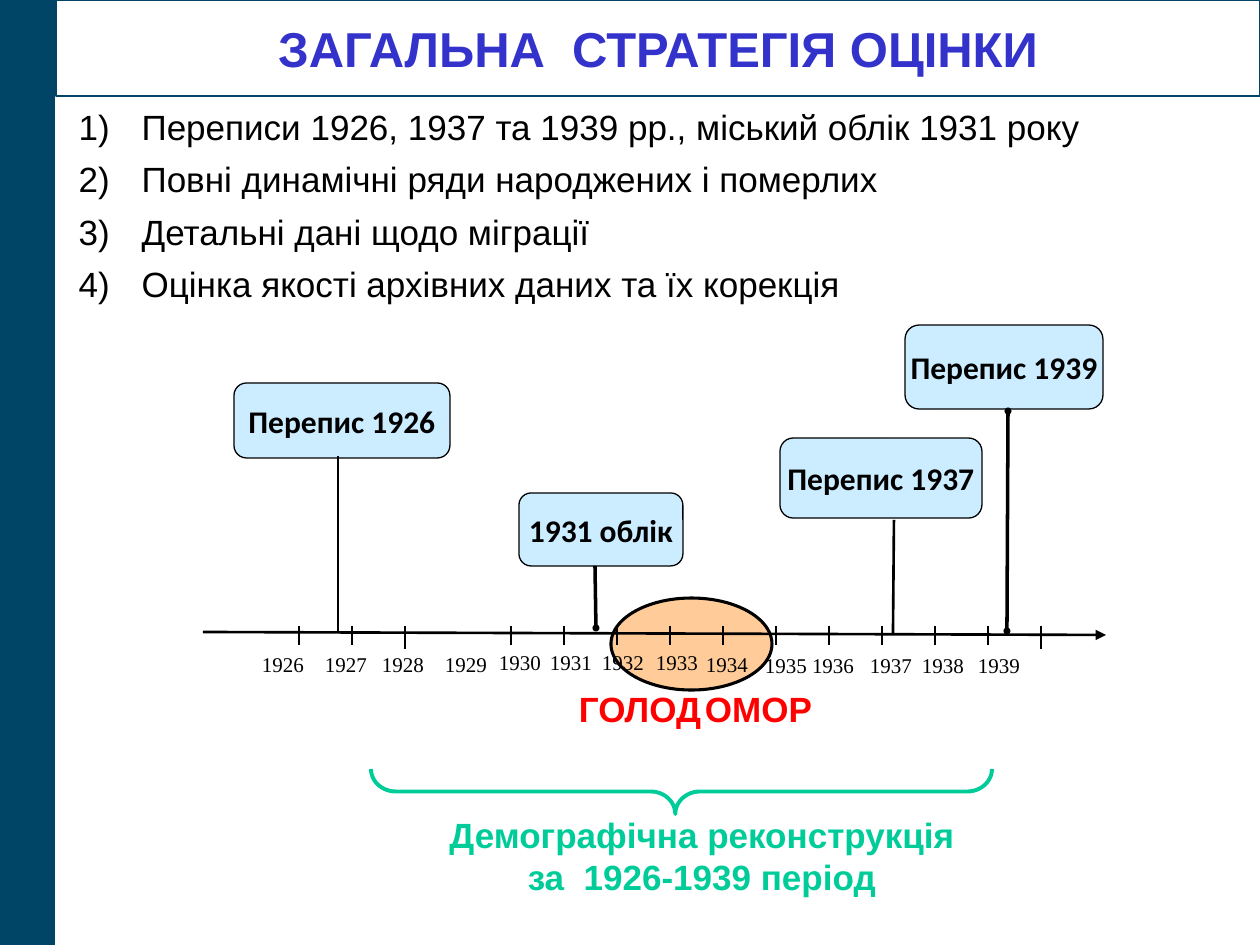
"""Build a slide with a census timeline and the period of demographic reconstruction."""
from dataclasses import dataclass

import pptx
import pptx.dml.color
import pptx.enum.shapes
import pptx.enum.text
import pptx.oxml
import pptx.oxml.ns
import pptx.util

PX_PER_INCH = 126
COLORS = {
    "band": "004466", "title": "3333CC", "black": "000000", "white": "FFFFFF",
    "box": "CCECFF", "ellipse": "FFCC99", "famine": "FF0000", "period": "00CC99",
}
SHAPES = pptx.enum.shapes.MSO_SHAPE
ANCHORS = pptx.enum.text.MSO_ANCHOR
CENTER = pptx.enum.text.PP_ALIGN.CENTER


@dataclass(frozen=True)
class Box:
    left: int
    top: int
    width: int
    height: int


@dataclass(frozen=True)
class Style:
    font: str
    size: int
    color: str
    bold: bool = False


@dataclass(frozen=True)
class Callout:
    text: str
    box: Box


@dataclass(frozen=True)
class Line:
    start: tuple[int, int]
    end: tuple[int, int]
    width: float = 1.5
    head: str = "none"
    tail: str = "none"


@dataclass(frozen=True)
class YearLabel:
    year: int
    center: int
    top: int


TITLE_STYLE = Style("Arial", 28, "title", True)
LIST_STYLE = Style("Arial", 20, "black")
CALLOUT_STYLE = Style("Calibri", 18, "black", True)
YEAR_STYLE = Style("Times New Roman", 12, "black")
FAMINE_STYLE = Style("Arial", 20, "famine", True)
PERIOD_STYLE = Style("Arial", 20, "period", True)

SOURCES = [
    "Переписи 1926, 1937 та 1939 рр., міський облік 1931 року",
    "Повні динамічні ряди народжених і померлих",
    "Детальні дані щодо міграції",
    "Оцінка якості архівних даних та їх корекція",
]
CALLOUTS = [
    Callout("Перепис 1926", Box(234, 383, 216, 75)),
    Callout("Перепис 1937", Box(780, 438, 202, 80)),
    Callout("Перепис 1939", Box(905, 325, 198, 84)),
    Callout("1931 облік", Box(519, 493, 164, 73)),
]
POINTERS = [
    Line((338, 456), (338, 631)),
    Line((595, 566), (596, 628), 2, tail="oval"),
    Line((894, 520), (893, 635)),
    Line((1008, 411), (1007, 631), 2, "oval", "oval"),
]
AXIS = Line((203, 632), (1106, 635), tail="triangle")
TICK_START, TICK_STEP, TICK_TOP = 299, 53, 626
TICKS = [index for index in range(15) if index != 3]
LONG_TICKS = (2, 14)
YEAR_CENTERS = [283, 346, 403, 466, 520, 571, 623, 677, 727, 786, 833, 891, 943, 999]


def px(length: int) -> int:
    return pptx.util.Inches(length / PX_PER_INCH)


def rgb(name: str) -> pptx.dml.color.RGBColor:
    return pptx.dml.color.RGBColor.from_string(COLORS[name])


def place(shape, box: Box) -> None:
    shape.left, shape.top = px(box.left), px(box.top)
    shape.width, shape.height = px(box.width), px(box.height)


def add_run(paragraph, text: str, style: Style) -> None:
    run = paragraph.add_run()
    run.text = text
    run.font.name = style.font
    run.font.size = pptx.util.Pt(style.size)
    run.font.bold = style.bold
    run.font.color.rgb = rgb(style.color)


def paint(shape, fill: str | None, line: str | None, width: float = 0.75) -> None:
    if fill:
        shape.fill.solid()
        shape.fill.fore_color.rgb = rgb(fill)
    else:
        shape.fill.background()
    if line:
        shape.line.color.rgb = rgb(line)
        shape.line.width = pptx.util.Pt(width)
    else:
        shape.line.fill.background()


def add_shape(slide, kind, box: Box, fill: str | None, line: str | None, width: float = 0.75):
    shape = slide.shapes.add_shape(
        kind, px(box.left), px(box.top), px(box.width), px(box.height))
    shape.shadow.inherit = False
    paint(shape, fill, line, width)
    return shape


def add_callout(slide, callout: Callout) -> None:
    shape = add_shape(slide, SHAPES.FLOWCHART_ALTERNATE_PROCESS, callout.box, "box", "black")
    frame = shape.text_frame
    frame.margin_left = frame.margin_right = frame.margin_top = frame.margin_bottom = 0
    frame.vertical_anchor = ANCHORS.MIDDLE
    frame.word_wrap = False
    frame.paragraphs[0].alignment = CENTER
    add_run(frame.paragraphs[0], callout.text, CALLOUT_STYLE)


def add_line(slide, line: Line) -> None:
    connector = slide.shapes.add_connector(
        pptx.enum.shapes.MSO_CONNECTOR.STRAIGHT,
        *(px(value) for value in line.start + line.end))
    connector.line.color.rgb = rgb("black")
    connector.line.width = pptx.util.Pt(line.width)
    outline = connector.line._get_or_add_ln()
    for tag, arrowhead in (("a:headEnd", line.head), ("a:tailEnd", line.tail)):
        if arrowhead != "none":
            size = "sm" if arrowhead == "oval" else "med"
            outline.append(outline.makeelement(
                pptx.oxml.ns.qn(tag), {"type": arrowhead, "w": size, "len": size}))
    properties = connector._element.spPr
    properties.append(properties.makeelement(pptx.oxml.ns.qn("a:effectLst"), {}))


def add_text(slide, text: str, box: Box, style: Style) -> None:
    shape = slide.shapes.add_textbox(
        px(box.left), px(box.top), px(box.width), px(box.height))
    shape.text_frame.word_wrap = True
    paragraph = shape.text_frame.paragraphs[0]
    paragraph.alignment = CENTER
    add_run(paragraph, text, style)


def fill_title(slide) -> None:
    title = slide.shapes.title
    place(title, Box(56, 0, 1204, 96))
    paint(title, "white", "band")
    frame = title.text_frame
    frame.auto_size = pptx.enum.text.MSO_AUTO_SIZE.NONE
    frame.vertical_anchor = ANCHORS.MIDDLE
    frame.word_wrap = False
    frame.paragraphs[0].alignment = CENTER
    add_run(frame.paragraphs[0], "ЗАГАЛЬНА  СТРАТЕГІЯ ОЦІНКИ", TITLE_STYLE)


def fill_sources(slide) -> None:
    body = slide.placeholders[1]
    place(body, Box(66, 99, 1109, 214))
    frame = body.text_frame
    frame.auto_size = pptx.enum.text.MSO_AUTO_SIZE.NONE
    for index, text in enumerate(SOURCES):
        paragraph = frame.add_paragraph() if index else frame.paragraphs[0]
        paragraph.space_before = pptx.util.Pt(6)
        properties = paragraph._p.get_or_add_pPr()
        properties.set("marL", str(px(63)))
        properties.set("indent", str(-px(63)))
        properties.append(properties.makeelement(
            pptx.oxml.ns.qn("a:buAutoNum"), {"type": "arabicParenR"}))
        add_run(paragraph, text, LIST_STYLE)


def draw_timeline(slide) -> None:
    add_shape(slide, SHAPES.OVAL, Box(611, 598, 161, 92), "ellipse", "black", 1.75)
    for callout in CALLOUTS:
        add_callout(slide, callout)
    ticks = []
    for index in TICKS:
        left = TICK_START + index * TICK_STEP
        bottom = 649 if index in LONG_TICKS else 645
        ticks.append(Line((left, TICK_TOP), (left, bottom)))
    for line in [AXIS, *ticks, *POINTERS]:
        add_line(slide, line)
    for year, center in enumerate(YEAR_CENTERS, 1926):
        top = 643 if 1930 <= year <= 1933 else 646 if year >= 1935 else 645
        label = YearLabel(year, center, top)
        add_text(slide, str(label.year), Box(label.center - 41, label.top, 82, 38), YEAR_STYLE)
    add_text(slide, "ГОЛОД\tОМОР", Box(563, 681, 265, 55), FAMINE_STYLE)


def draw_period(slide) -> None:
    brace = add_shape(slide, SHAPES.RIGHT_BRACE, Box(659, 481, 45, 621), None, "period", 2.25)
    brace.rotation = 90
    brace.adjustments[0], brace.adjustments[1] = 0.55, 0.51
    add_text(slide, "Демографічна реконструкція за  1926-1939 період",
             Box(428, 807, 548, 97), PERIOD_STYLE)


def main() -> None:
    presentation = pptx.Presentation()
    presentation.slide_width, presentation.slide_height = px(1260), px(945)
    slide = presentation.slides.add_slide(presentation.slide_layouts[1])
    add_shape(slide, SHAPES.RECTANGLE, Box(0, 0, 55, 945), "band", None)
    fill_title(slide)
    fill_sources(slide)
    draw_timeline(slide)
    draw_period(slide)
    presentation.save("out.pptx")


if __name__ == "__main__":
    main()
